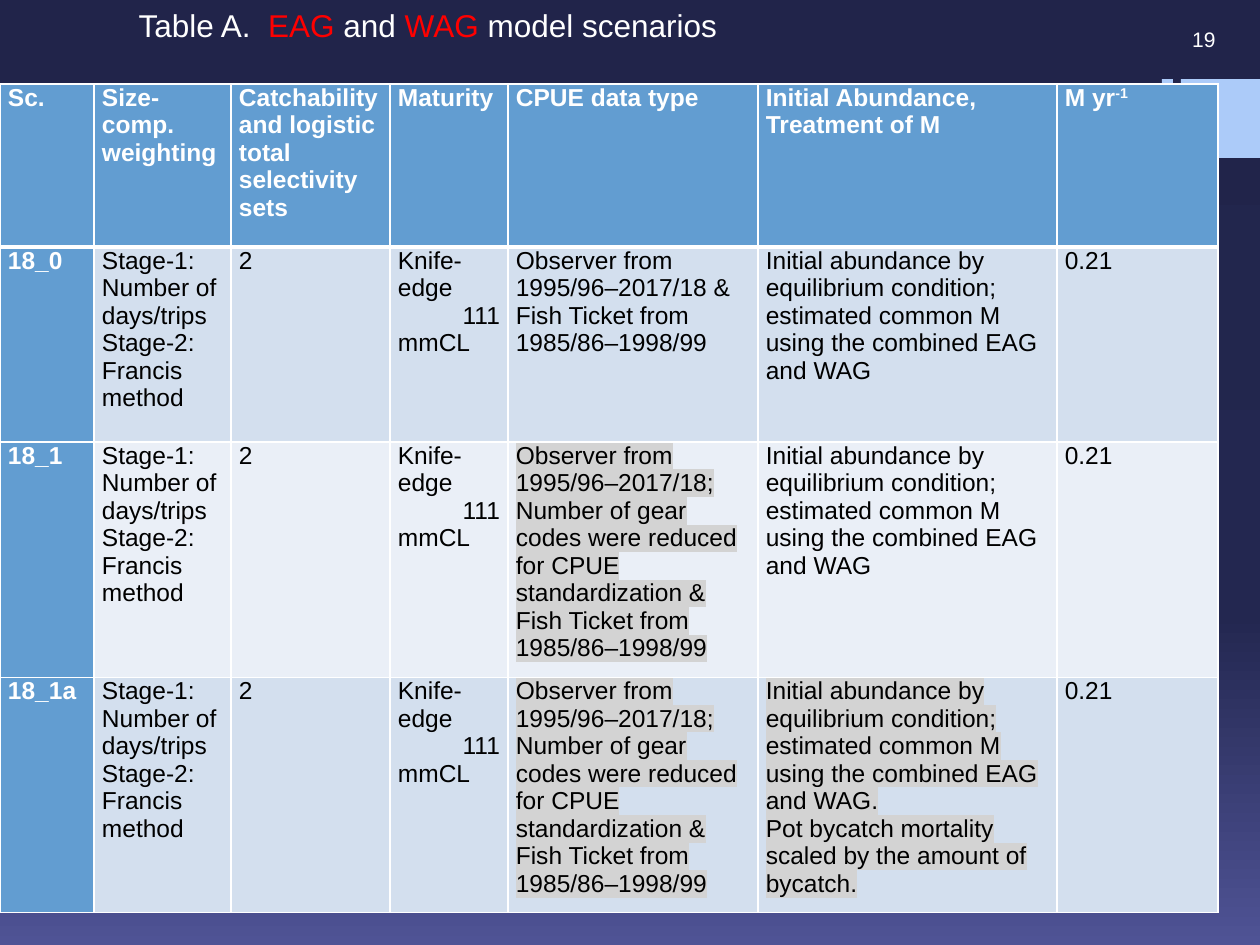
from copy import deepcopy

from lxml import etree
from pptx import Presentation
from pptx.dml.color import RGBColor
from pptx.enum.shapes import MSO_SHAPE
from pptx.enum.text import MSO_ANCHOR, MSO_AUTO_SIZE, PP_ALIGN
from pptx.oxml.ns import qn
from pptx.util import Emu, Pt

RECT = MSO_SHAPE.RECTANGLE
TOP, MIDDLE = MSO_ANCHOR.TOP, MSO_ANCHOR.MIDDLE
LEFT, RIGHT, JUSTIFY = PP_ALIGN.LEFT, PP_ALIGN.RIGHT, PP_ALIGN.JUSTIFY
FIXED = MSO_AUTO_SIZE.NONE

SCALE = 914400 / 126
COLORS = {
    "white": "FFFFFF", "black": "000000", "red": "FF0000",
    "accent": "ACCBF9", "head": "629DD1", "odd": "D3DFEE", "even": "EAEFF7",
    "mark": "D3D3D3", "night": "21244A", "dusk": "232750", "dawn": "4F5395",
}

WIDTHS = [94, 137, 159, 118, 250, 299, 161]
HEIGHTS = [163, 195, 235, 235]
HEADS = ["Sc.", "Size-comp. weighting",
         "Catchability and logistic total selectivity sets", "Maturity",
         "CPUE data type", "Initial Abundance, Treatment of M", "M yr"]
STAGES = ["Stage-1: Number of days/trips", "Stage-2: Francis method"]
KNIFE = ["Knife-edge", " 111 mmCL"]
FULL = ["Observer from 1995/96–2017/18 & Fish Ticket from 1985/86–1998/99"]
REDUCED = ["Observer from 1995/96–2017/18; Number of gear codes were reduced "
           "for CPUE standardization & Fish Ticket from 1985/86–1998/99"]
START = ("Initial abundance by equilibrium condition; estimated common M "
         "using the combined EAG and WAG")
POT = "Pot bycatch mortality scaled by the amount of bycatch."
CASES = [("18_0", FULL, [START]),
         ("18_1", REDUCED, [START]),
         ("18_1a", REDUCED, [START + ".", POT])]
MARKED = {(2, 4), (3, 4), (3, 5)}
HEAD_LEFT, BODY_LEFT = {2, 5}, {1, 4, 5}


def px(n):
    return Emu(round(n * SCALE))


def rgb(name):
    return RGBColor.from_string(COLORS[name])


def apply(item, values):
    for key, value in values.items():
        setattr(item, key, value)


def add_run(para, text, color, size, bold=False):
    run = para.add_run()
    run.text = text
    apply(run.font, {"name": "Arial", "size": Pt(size), "bold": bold})
    run.font.color.rgb = rgb(color)
    return run


def highlight(run):
    fill = run.font._element.find(qn("a:solidFill"))
    mark = etree.Element(qn("a:highlight"))
    etree.SubElement(mark, qn("a:srgbClr"), val=COLORS["mark"])
    fill.addnext(mark)


def border(cell, side, width):
    line = etree.SubElement(cell._tc.get_or_add_tcPr(), qn("a:ln" + side),
                            w=str(Pt(width)))
    fill = etree.SubElement(line, qn("a:solidFill"))
    etree.SubElement(fill, qn("a:srgbClr"), val=COLORS["white"])


def paint_back(slide):
    fill = slide.background.fill
    fill.gradient()
    fill.gradient_angle = 270
    stops = slide._element.find(".//" + qn("a:gsLst"))
    stops.append(deepcopy(stops[-1]))
    tones = [(0, "night"), (0.65, "dusk"), (1, "dawn")]
    for stop, (place, tone) in zip(fill.gradient_stops, tones):
        stop.position = place
        stop.color.rgb = rgb(tone)


def add_bars(slide, x, y, w, h):
    """Place a thin bar and a square at the two ends of the box."""
    for left, wide in [(x, 11), (x + w - h, h)]:
        bar = slide.shapes.add_shape(RECT, px(left), px(y), px(wide), px(h))
        bar.shadow.inherit = False
        bar.fill.solid()
        bar.fill.fore_color.rgb = rgb("accent")
        bar.line.fill.background()


def add_title(slide, x, y, w, h):
    title = slide.shapes.title
    apply(title, {"left": px(x), "top": px(y), "width": px(w), "height": px(h)})
    frame = title.text_frame
    apply(frame, {"word_wrap": True, "auto_size": FIXED, "vertical_anchor": TOP})
    para = frame.paragraphs[0]
    para.alignment = LEFT
    for text, color in [("Table A.  ", "white"), ("EAG", "red"),
                        (" and ", "white"), ("WAG", "red"),
                        (" model scenarios", "white")]:
        add_run(para, text, color, 18)


def add_number(slide, x, y, w, h):
    box = slide.shapes.add_textbox(px(x), px(y), px(w), px(h))
    frame = box.text_frame
    apply(frame, {"word_wrap": True, "vertical_anchor": MIDDLE})
    para = frame.paragraphs[0]
    para.alignment = RIGHT
    add_run(para, "19", "white", 12)


def fill_cell(cell, row, col, lines):
    strong = row == 0 or col == 0
    tone = "head" if strong else ("odd" if row % 2 else "even")
    apply(cell, {"margin_left": px(8), "margin_right": px(8),
                 "margin_top": 0, "margin_bottom": 0})
    for side in "LRTB":
        thick = (row, side) in {(0, "B"), (1, "T")}
        border(cell, side, 3 if thick else 1)
    cell.fill.solid()
    cell.fill.fore_color.rgb = rgb(tone)
    ragged = col in (BODY_LEFT if row else HEAD_LEFT)
    frame = cell.text_frame
    for i, text in enumerate(lines):
        para = frame.add_paragraph() if i else frame.paragraphs[0]
        para.alignment = LEFT if ragged else JUSTIFY
        run = add_run(para, text, "white" if strong else "black", 14, strong)
        if (row, col) in MARKED:
            highlight(run)


def add_grid(slide, x, y):
    rows = [[[head] for head in HEADS]]
    rows += [[[name], STAGES, ["2"], KNIFE, data, start, ["0.21"]]
             for name, data, start in CASES]
    table = slide.shapes.add_table(
        len(rows), len(WIDTHS), px(x), px(y),
        px(sum(WIDTHS)), px(sum(HEIGHTS))).table
    for col, width in zip(table.columns, WIDTHS):
        col.width = px(width)
    for row, height in zip(table.rows, HEIGHTS):
        row.height = px(height)
    for r, row in enumerate(rows):
        for c, lines in enumerate(row):
            fill_cell(table.cell(r, c), r, c, lines)
    unit = table.cell(0, len(WIDTHS) - 1).text_frame.paragraphs[0]
    power = add_run(unit, "-1", "white", 14, True)
    power.font._element.set("baseline", "30000")


def main():
    prs = Presentation()
    apply(prs, {"slide_width": px(1260), "slide_height": px(945)})
    slide = prs.slides.add_slide(prs.slide_layouts[5])
    paint_back(slide)
    add_bars(slide, 1162, 79, 98, 79)
    add_number(slide, 1130, 23, 98, 33)
    add_title(slide, 126, 0, 798, 50)
    add_grid(slide, 0, 84)
    prs.save("out.pptx")


if __name__ == "__main__":
    main()
